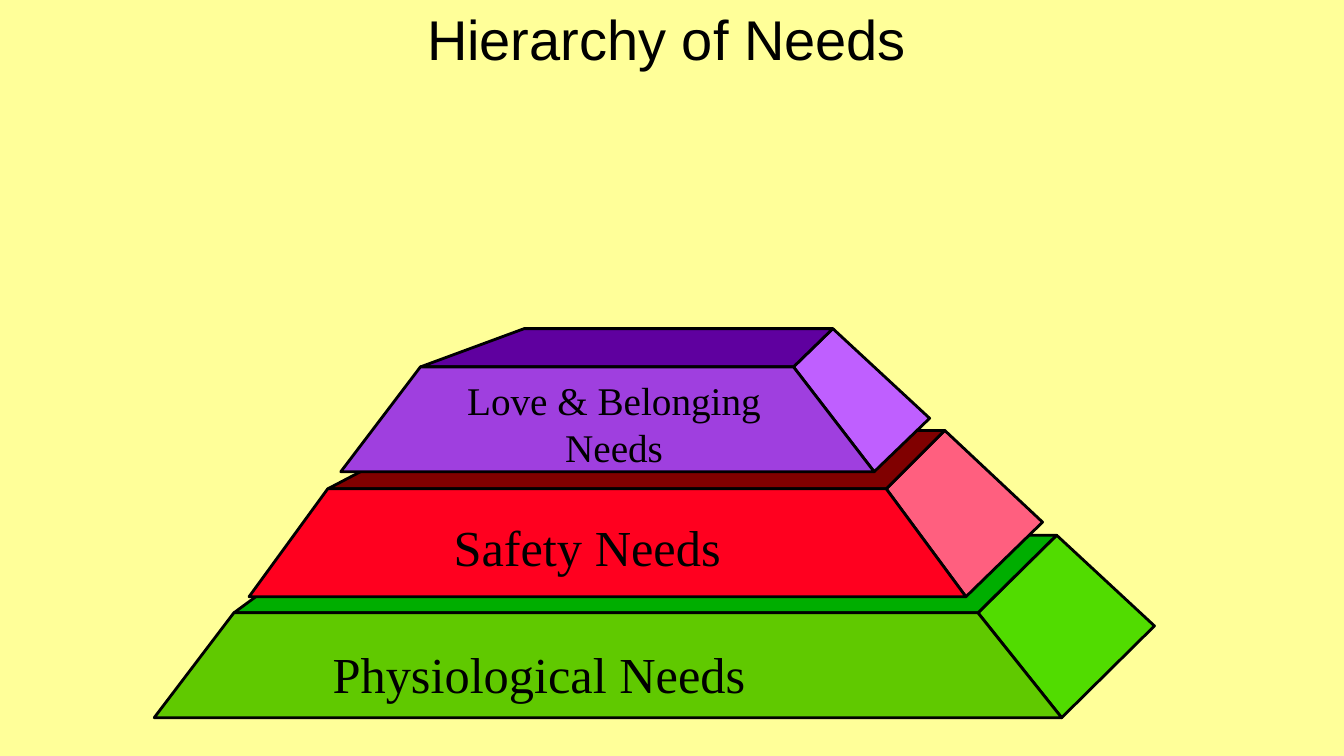
from dataclasses import dataclass

from pptx import Presentation
from pptx.dml.color import RGBColor
from pptx.enum.text import PP_ALIGN
from pptx.util import Inches, Pt

LEFT = PP_ALIGN.LEFT
CENTER = PP_ALIGN.CENTER


@dataclass(frozen=True)
class Theme:
    background: str = "FFFF99"
    ink: str = "000000"
    outline: float = 2
    title: tuple = ("Arial", 40)
    label: tuple = ("Times New Roman", 36)
    small_label: tuple = ("Times New Roman", 28)
    green: tuple = ("51DC00", "00AE00", "60C900")
    red: tuple = ("FF5F7F", "800000", "FF001F")
    purple: tuple = ("BF5FFF", "5F009F", "9F3FDF")


class SlideBuilder:
    def __init__(self, deck, theme):
        self.theme = theme
        self.page = deck.slides.add_slide(deck.slide_layouts[6])
        fill = self.page.background.fill
        fill.solid()
        fill.fore_color.rgb = RGBColor.from_string(theme.background)

    def face(self, shapes, points, color):
        corners = [(Inches(x), Inches(y)) for x, y in points]
        builder = shapes.build_freeform(*corners[0])
        builder.add_line_segments(corners[1:], close=True)
        shape = builder.convert_to_shape()
        shape.shadow.inherit = False
        shape.fill.solid()
        shape.fill.fore_color.rgb = RGBColor.from_string(color)
        shape.line.color.rgb = RGBColor.from_string(self.theme.ink)
        shape.line.width = Pt(self.theme.outline)

    def tier(self, front_top, front_bottom, back, tip, colors):
        top_left, top_right = front_top
        bottom_left, bottom_right = front_bottom
        back_left, back_right = back
        faces = (
            (bottom_right, top_right, back_right, tip),
            (top_left, top_right, back_right, back_left),
            (top_left, top_right, bottom_right, bottom_left),
        )
        group = self.page.shapes.add_group_shape()
        for points, color in zip(faces, colors):
            self.face(group.shapes, points, color)

    def text(self, place, lines, style, alignment):
        box = self.page.shapes.add_textbox(*(Inches(length) for length in place))
        frame = box.text_frame
        frame.word_wrap = True
        frame.text = "\n".join(lines)
        name, size = style
        values = {"name": name, "size": Pt(size)}
        for para in frame.paragraphs:
            para.alignment = alignment
            for span in para.runs:
                for key, value in values.items():
                    setattr(span.font, key, value)
                span.font.color.rgb = RGBColor.from_string(self.theme.ink)


def main():
    deck = Presentation()
    deck.slide_width = Inches(13.33)
    deck.slide_height = Inches(7.5)
    theme = Theme()
    slide = SlideBuilder(deck, theme)

    tiers = (
        (((2.32, 6.08), (9.7, 6.08)), ((1.53, 7.12), (10.53, 7.12)),
         ((3.37, 5.31), (10.48, 5.31)), (11.45, 6.21), theme.green),
        (((3.25, 4.85), (8.79, 4.85)), ((2.47, 5.92), (9.58, 5.92)),
         ((4.34, 4.28), (9.37, 4.27)), (10.34, 5.18), theme.red),
        (((4.17, 3.64), (7.87, 3.64)), ((3.38, 4.68), (8.67, 4.68)),
         ((5.2, 3.26), (8.26, 3.26)), (9.22, 4.15), theme.purple),
    )
    for tier in tiers:
        slide.tier(*tier)

    texts = (
        ((3.2, 6.33, 4.34, 0.7), ["Physiological Needs"], theme.label, LEFT),
        ((4.47, 3.68, 3.24, 1.04), ["Love & Belonging", "Needs"], theme.small_label, CENTER),
        ((2.76, 5.07, 6.13, 0.7), ["Safety Needs"], theme.label, CENTER),
        ((0, 0, 13.22, 0.76), ["Hierarchy of Needs"], theme.title, CENTER),
    )
    for text in texts:
        slide.text(*text)

    deck.save("out.pptx")


if __name__ == "__main__":
    main()
